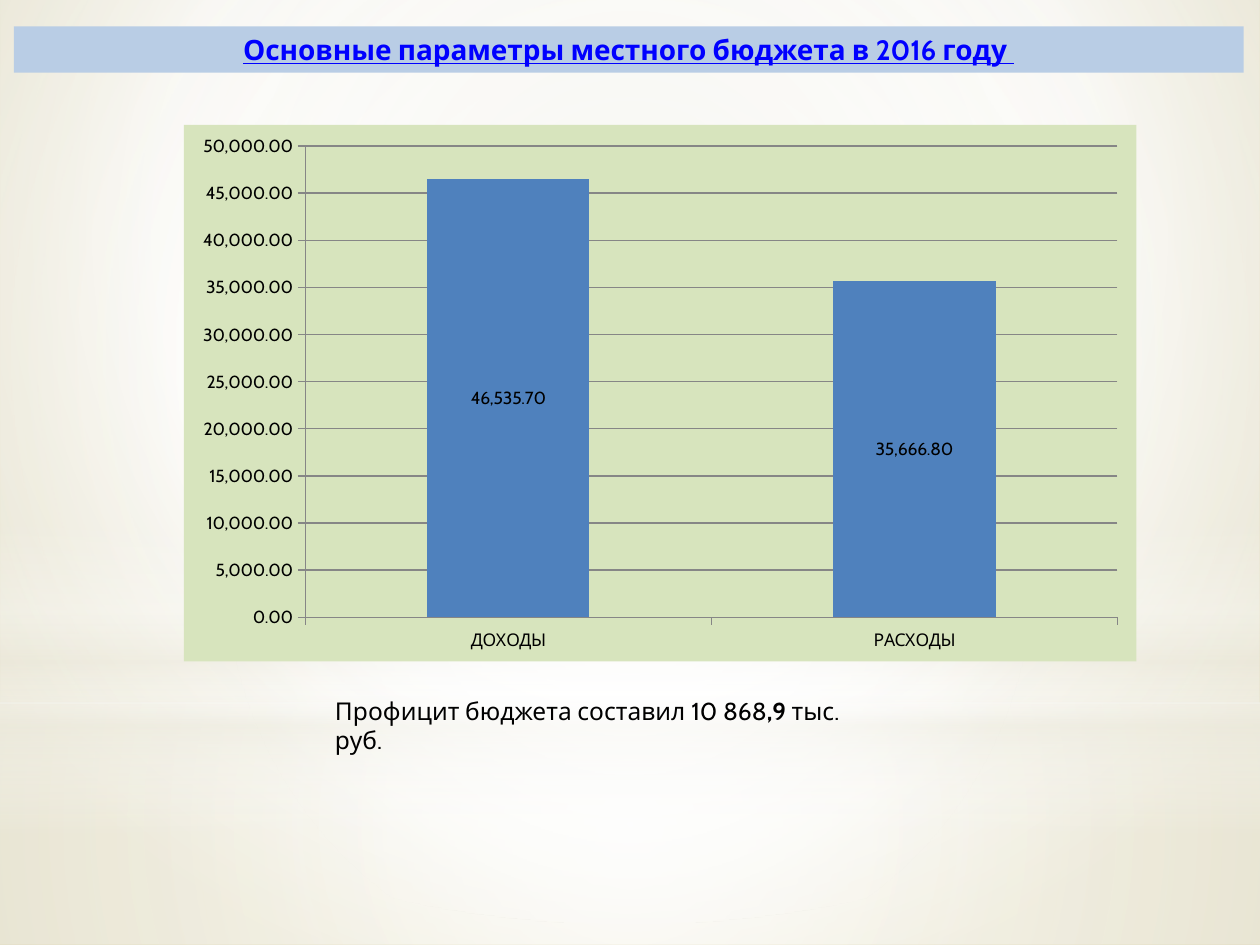
from lxml import etree
from pptx import Presentation
from pptx import util as u
from pptx.chart.data import CategoryChartData
from pptx.dml.color import RGBColor
from pptx.enum import chart as ch, shapes, text
from pptx.oxml.ns import nsdecls, qn

WIDTH, HEIGHT = 10, 7.5
FONT = "Cabin"
BLACK, AXIS_GREY = "000000", "868686"
NUMBER_FORMAT = "#,##0.00"
CENTRE = (50, 50, 50, 50)


def rgb(hex_colour):
    return RGBColor.from_string(hex_colour)


def format_font(font, size, colour=BLACK, bold=False, underline=False):
    font.name, font.size, font.bold = FONT, u.Pt(size), bold
    font.underline = underline
    font.color.rgb = rgb(colour)


def add_run(p, words, **fmt):
    r = p.add_run()
    r.text = words
    format_font(r.font, **fmt)


def set_gradient(fill, element, stops, centre=None, angle=0):
    """Fill with (position, colour, opacity) stops, round a centre or along an angle."""
    fill.solid()
    marks = "".join(
        f'<a:gs pos="{pos * 1000}"><a:srgbClr val="{colour}">'
        f'<a:alpha val="{opacity * 1000}"/></a:srgbClr></a:gs>'
        for pos, colour, opacity in stops)
    if centre:
        sides = " ".join(f'{side}="{share * 1000}"' for side, share in zip("ltrb", centre))
        course = f'<a:path path="circle"><a:fillToRect {sides}/></a:path>'
    else:
        course = f'<a:lin ang="{angle * 60000}" scaled="0"/>'
    solid = element.find(".//" + qn("a:solidFill"))
    solid.getparent().replace(solid, etree.fromstring(
        f'<a:gradFill {nsdecls("a")} rotWithShape="1">'
        f'<a:gsLst>{marks}</a:gsLst>{course}</a:gradFill>'))


class BudgetSlide:
    def __init__(self, prs):
        self.s = prs.slides.add_slide(prs.slide_layouts[5])

    def box(self, left, top, width, height):
        """Turn shares of the slide's size into lengths."""
        return (u.Inches(left * WIDTH), u.Inches(top * HEIGHT),
                u.Inches(width * WIDTH), u.Inches(height * HEIGHT))

    def background(self, stops, centre):
        set_gradient(self.s.background.fill, self.s._element, stops, centre)

    def glow(self, kind, top, height, stops, **course):
        sp = self.s.shapes.add_shape(kind, *self.box(0, top, 1, height))
        sp.shadow.inherit = False
        sp.line.fill.background()
        set_gradient(sp.fill, sp._element, stops, **course)

    def title(self, words, box, fill, **fmt):
        sp = self.s.shapes.title
        self.s.shapes._spTree.append(sp._element)  # in front of the glows
        sp.left, sp.top, sp.width, sp.height = self.box(*box)
        sp.fill.solid()
        sp.fill.fore_color.rgb = rgb(fill)
        tf = sp.text_frame
        tf.word_wrap, tf.auto_size = True, text.MSO_AUTO_SIZE.NONE
        tf.vertical_anchor = text.MSO_ANCHOR.MIDDLE
        p = tf.paragraphs[0]
        p.alignment = text.PP_ALIGN.CENTER
        add_run(p, words, **fmt)

    def note(self, runs, box, size):
        tf = self.s.shapes.add_textbox(*self.box(*box)).text_frame
        tf.word_wrap = True
        for words, bold in runs:
            add_run(tf.paragraphs[0], words, size=size, bold=bold)

    def column_chart(self, values, box, fill, colour):
        data = CategoryChartData(number_format=NUMBER_FORMAT)
        data.categories = list(values)
        data.add_series("Series 1", list(values.values()))
        chart = self.s.shapes.add_chart(
            ch.XL_CHART_TYPE.COLUMN_STACKED, *self.box(*box), data).chart
        chart.has_legend = chart.has_title = False
        format_font(chart.font, 10)

        space = chart._chartSpace
        panel = etree.fromstring(
            f'<c:spPr {nsdecls("c", "a")}><a:solidFill><a:srgbClr val="{fill}"/></a:solidFill>'
            '<a:ln><a:noFill/></a:ln></c:spPr>')
        space.find(qn("c:chart")).addnext(panel)

        plot = chart.plots[0]
        plot.gap_width, plot.overlap, plot.vary_by_categories = 150, 100, False
        series = plot.series[0]
        series.format.fill.solid()
        series.format.fill.fore_color.rgb = rgb(colour)
        labels = series.data_labels
        labels.show_value = True
        labels.number_format, labels.number_format_is_linked = NUMBER_FORMAT, False
        labels.position = ch.XL_LABEL_POSITION.CENTER
        format_font(labels.font, 10)

        scale = chart.value_axis
        scale.minimum_scale, scale.maximum_scale, scale.major_unit = 0, 50000, 5000
        scale.has_major_gridlines = True
        scale.tick_labels.number_format = NUMBER_FORMAT
        scale.tick_labels.number_format_is_linked = False
        for axis in (chart.category_axis, scale):
            axis.major_tick_mark = ch.XL_TICK_MARK.OUTSIDE
            axis.minor_tick_mark = ch.XL_TICK_MARK.NONE
        for part in (chart.category_axis, scale, scale.major_gridlines):
            part.format.line.color.rgb = rgb(AXIS_GREY)
            part.format.line.width = u.Pt(0.75)


def main():
    prs = Presentation()
    prs.slide_width, prs.slide_height = u.Inches(WIDTH), u.Inches(HEIGHT)
    slide = BudgetSlide(prs)
    rect, oval = shapes.MSO_SHAPE.RECTANGLE, shapes.MSO_SHAPE.OVAL
    white, cream = "FFFFFF", "EEECE1"

    slide.background([(0, "E7E4D4", 100), (60, white, 100), (100, "D5CC9F", 100)],
                     (20, 10, 20, 60))
    horizon = 0.744
    slide.glow(rect, horizon, 1 - horizon,
               [(0, white, 91), (37, white, 76), (100, cream, 79)], centre=CENTRE)
    slide.glow(rect, 0, horizon,
               [(0, white, 89), (48, white, 62), (100, cream, 79)], centre=CENTRE)
    slide.glow(rect, 0.55, 0.333,
               [(0, white, 0), (29, white, 30), (45, cream, 40),
                (55, white, 26), (65, cream, 60), (100, white, 0)], angle=90)
    slide.glow(oval, 0.233, horizon, [(0, white, 100), (56, white, 0)], centre=CENTRE)

    slide.title("Основные параметры местного бюджета в 2016 году ",
                (0.011, 0.028, 0.976, 0.049), "B9CDE5",
                size=16, colour="0000FF", bold=True, underline=True)
    slide.note([("Профицит бюджета составил 10 868", False), (",9 ", True),
                ("тыс. руб.", False)], (0.256, 0.73, 0.458, 0.045), size=14)
    slide.column_chart({"ДОХОДЫ": 46535.7, "РАСХОДЫ": 35666.8},
                       (0.146, 0.132, 0.756, 0.568), "D7E4BD", "4F81BD")
    prs.save("out.pptx")


if __name__ == "__main__":
    main()
